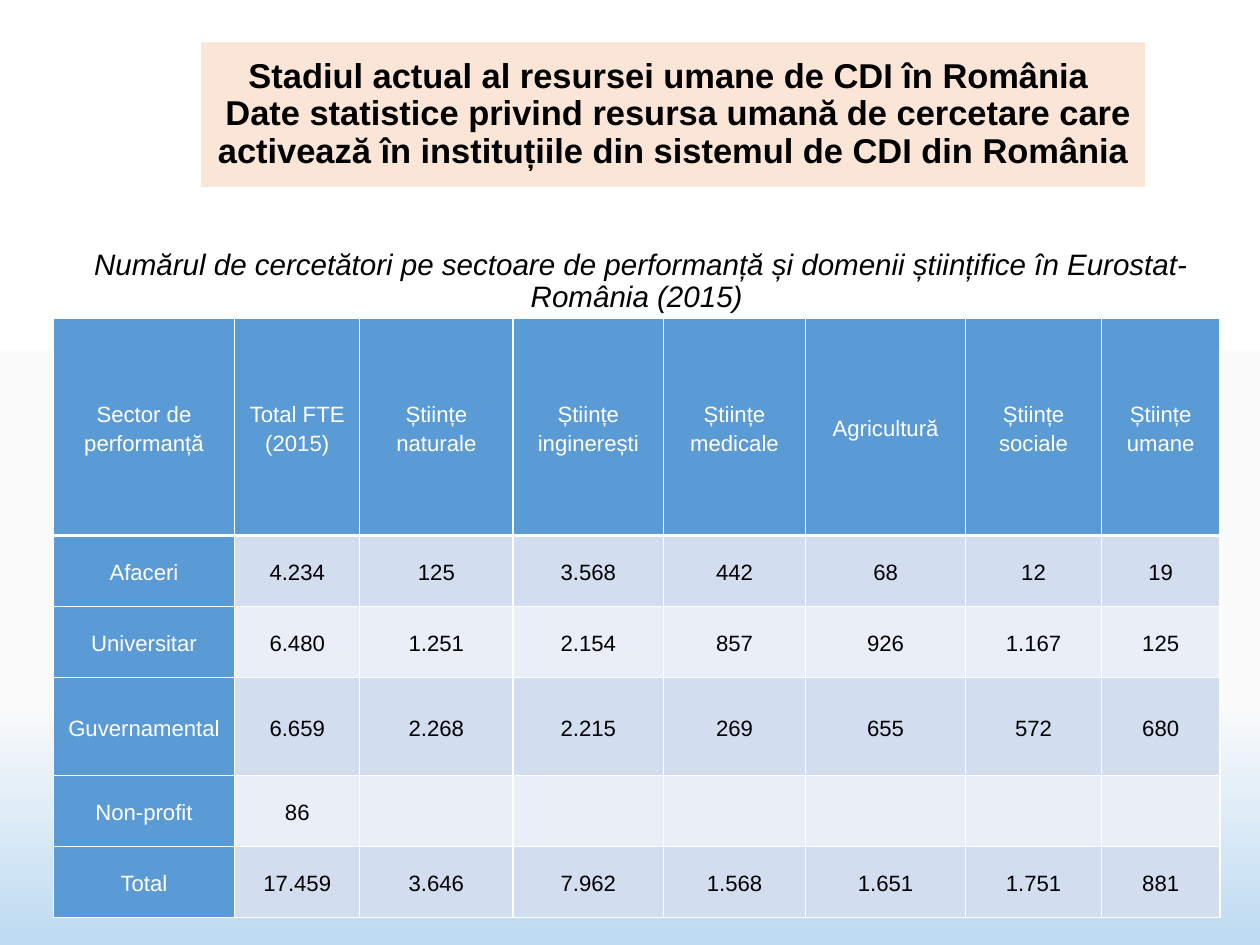
from copy import deepcopy

from lxml.etree import SubElement
from pptx import Presentation
from pptx.dml.color import RGBColor
from pptx.enum.shapes import MSO_SHAPE
from pptx.enum.text import MSO_ANCHOR, PP_ALIGN
from pptx.oxml import parse_xml
from pptx.oxml.ns import nsdecls, qn
from pptx.util import Inches, Pt

WHITE = RGBColor(0xFF, 0xFF, 0xFF)
BLACK = RGBColor(0x00, 0x00, 0x00)
OFF_WHITE = RGBColor(0xFB, 0xFB, 0xFB)
SKY = RGBColor(0xC0, 0xDC, 0xF2)
PEACH = RGBColor(0xFB, 0xE5, 0xD6)
BLUE = RGBColor(0x5B, 0x9B, 0xD5)
BAND_DARK = RGBColor(0xD2, 0xDE, 0xEF)
BAND_LIGHT = RGBColor(0xEA, 0xEF, 0xF7)

FONT = "Arial"
SLIDE_WIDTH, SLIDE_HEIGHT = 14.22, 10.67
MARGIN = 0.6
TABLE_TOP = 3.6
CAPTION_HEIGHT = 0.97
COLUMN_WIDTHS = [2.05, 1.41, 1.73, 1.7, 1.6, 1.81, 1.53, 1.34]
ROW_HEIGHTS = [2.45, 0.8, 0.8, 1.11, 0.8, 0.8]
CONTENT_WIDTH = sum(COLUMN_WIDTHS)

TITLE = ("Stadiul actual al resursei umane de CDI în România \v"
         " Date statistice privind resursa umană de cercetare care "
         "activează în instituțiile din sistemul de CDI din România")
CAPTION = (" Numărul de cercetători pe sectoare de performanță și domenii "
           "științifice în Eurostat-România (2015)")
RESEARCHERS = [
    ["Sector de performanță", "Total FTE (2015)", "Științe naturale",
     "Științe inginerești", "Științe medicale", "Agricultură",
     "Științe sociale", "Științe umane"],
    ["Afaceri", "4.234", "125", "3.568", "442", "68", "12", "19"],
    ["Universitar", "6.480", "1.251", "2.154", "857", "926", "1.167", "125"],
    ["Guvernamental", "6.659", "2.268", "2.215", "269", "655", "572", "680"],
    ["Non-profit", "86", "", "", "", "", "", ""],
    ["Total", "17.459", "3.646", "7.962", "1.568", "1.651", "1.751", "881"],
]


def paint_background(slide):
    fill = slide.background.fill
    fill.gradient()
    fill.gradient_angle = 270
    first_stop = next(slide.element.iter(qn("a:gs")))
    first_stop.addnext(deepcopy(first_stop))
    stops = [(0, WHITE), (0.74, OFF_WHITE), (0.99, SKY)]
    for stop, (position, color) in zip(fill.gradient_stops, stops):
        stop.position = position
        stop.color.rgb = color


def format_paragraph(paragraph, size, color, line_spacing, space_before=0,
                     bold=False, italic=False):
    paragraph.alignment = PP_ALIGN.CENTER
    paragraph.line_spacing = line_spacing
    paragraph.space_before = Pt(space_before)
    for run in paragraph.runs:
        run.font.name = FONT
        run.font.size = Pt(size)
        run.font.bold = bold
        run.font.italic = italic
        run.font.color.rgb = color


def fill_frame(frame, text, anchor, **style):
    frame.word_wrap = True
    frame.vertical_anchor = anchor
    frame.margin_left = frame.margin_right = Inches(0.12)
    frame.margin_top = frame.margin_bottom = Inches(0.06)
    frame.text = text
    format_paragraph(frame.paragraphs[0], color=BLACK, line_spacing=0.9, **style)


def add_title(slide):
    banner = slide.shapes.add_shape(
        MSO_SHAPE.RECTANGLE, Inches(2.27), Inches(0.48), Inches(10.65), Inches(1.63))
    banner.shadow.inherit = False
    banner.fill.solid()
    banner.fill.fore_color.rgb = PEACH
    banner.line.fill.background()
    fill_frame(banner.text_frame, TITLE, MSO_ANCHOR.MIDDLE, size=28, bold=True)


def add_caption(slide):
    caption = slide.shapes.add_textbox(
        Inches(MARGIN), Inches(TABLE_TOP - CAPTION_HEIGHT),
        Inches(CONTENT_WIDTH), Inches(CAPTION_HEIGHT))
    fill_frame(caption.text_frame, CAPTION, MSO_ANCHOR.BOTTOM,
               size=24, italic=True, space_before=11.9)


def set_borders(cell, bottom_width):
    """Draw white borders; they must come before the fill in the cell's XML."""
    properties = cell._tc.get_or_add_tcPr()
    widths = {"lnL": 1, "lnR": 1, "lnT": 1, "lnB": bottom_width}
    for index, (side, width) in enumerate(widths.items()):
        border = parse_xml(f'<a:{side} {nsdecls("a")} w="{Pt(width)}"/>')
        solid = SubElement(border, qn("a:solidFill"))
        SubElement(solid, qn("a:srgbClr"), val=str(WHITE))
        properties.insert(index, border)


def fill_cell(cell, text, background, color, bottom_width):
    cell.margin_left = cell.margin_right = Inches(0.07)
    cell.margin_top = cell.margin_bottom = 0
    cell.vertical_anchor = MSO_ANCHOR.MIDDLE
    cell.fill.solid()
    cell.fill.fore_color.rgb = background
    set_borders(cell, bottom_width)
    cell.text_frame.text = text
    format_paragraph(cell.text_frame.paragraphs[0], 18, color, 1.15, space_before=10)


def add_researcher_table(slide):
    table = slide.shapes.add_table(
        len(ROW_HEIGHTS), len(COLUMN_WIDTHS), Inches(MARGIN), Inches(TABLE_TOP),
        Inches(CONTENT_WIDTH), Inches(sum(ROW_HEIGHTS))).table
    table.first_col = True
    for column, width in zip(table.columns, COLUMN_WIDTHS):
        column.width = Inches(width)
    for row, height in zip(table.rows, ROW_HEIGHTS):
        row.height = Inches(height)
    for r, values in enumerate(RESEARCHERS):
        band = BAND_DARK if r % 2 else BAND_LIGHT
        for c, value in enumerate(values):
            is_heading = r == 0 or c == 0
            fill_cell(table.cell(r, c), value,
                      background=BLUE if is_heading else band,
                      color=WHITE if is_heading else BLACK,
                      bottom_width=3 if r == 0 else 1)


def main():
    presentation = Presentation()
    presentation.slide_width = Inches(SLIDE_WIDTH)
    presentation.slide_height = Inches(SLIDE_HEIGHT)
    slide = presentation.slides.add_slide(presentation.slide_layouts[6])
    paint_background(slide)
    add_title(slide)
    add_caption(slide)
    add_researcher_table(slide)
    presentation.save("out.pptx")


if __name__ == "__main__":
    main()
